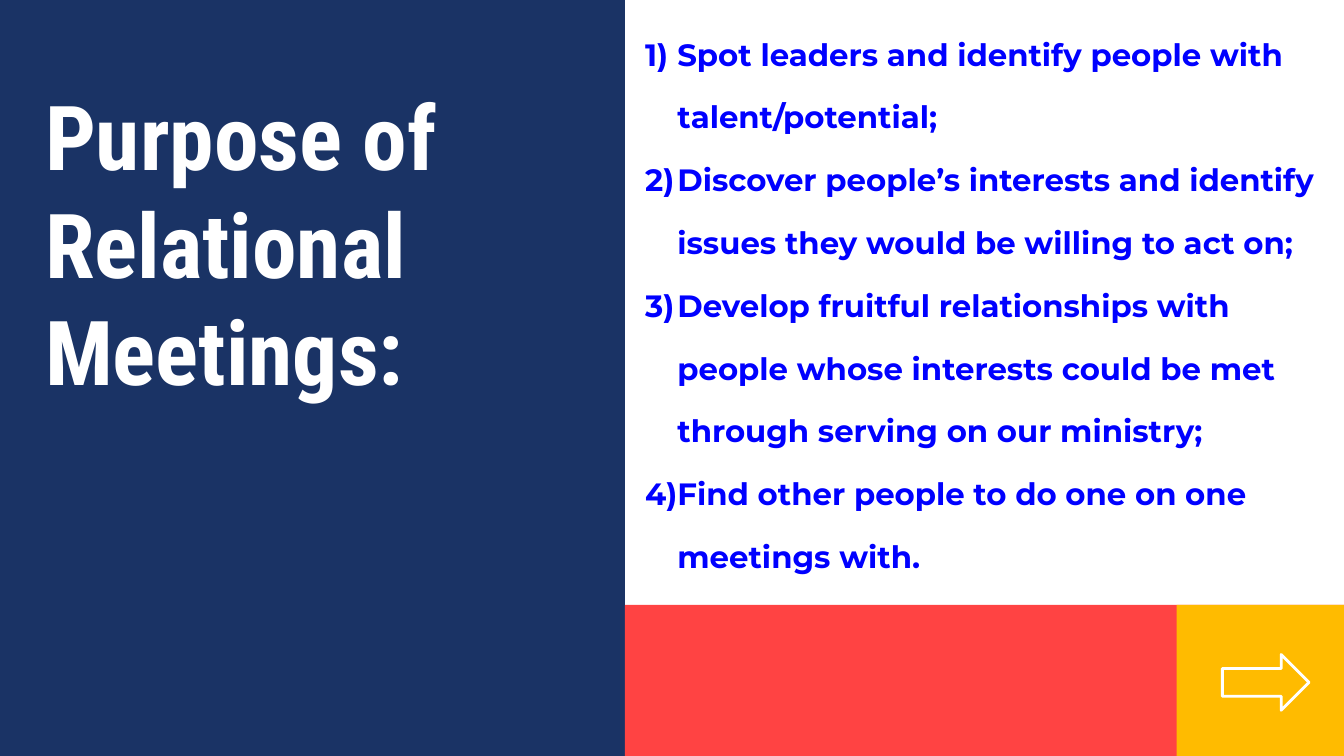
from dataclasses import dataclass

from lxml import etree
from pptx import Presentation
from pptx import util as u
from pptx.dml.color import RGBColor
from pptx.enum import shapes, text
from pptx.oxml import ns


@dataclass(frozen=True)
class Theme:
    navy: str = "1A3365"
    red: str = "FF4343"
    yellow: str = "FFBB00"
    white: str = "FFFFFF"
    blue: str = "0000FF"
    title_font: str = "Roboto Condensed"
    body_font: str = "Montserrat"
    title_size: float = 96
    body_size: float = 33


THEME = Theme()

# The grid has square cells: 20 columns by 11.25 rows.
COLUMNS, ROWS = 20, 11.25
CELL = u.Inches(1)
PANEL_RIGHT = 9.3
BAND_TOP = 9
BAND_HEIGHT = ROWS - BAND_TOP
CORNER_LEFT = 17.51

TITLE = "Purpose of Relational Meetings:"
PURPOSES = [
    "Spot leaders and identify people with talent/potential;",
    "Discover people’s interests and identify issues they would be willing to act on;",
    "Develop fruitful relationships with people whose interests could be met "
    "through serving on our ministry;",
    "Find other people to do one on one meetings with.",
]


def cells(*counts):
    return [round(count * CELL) for count in counts]


def add_block(slide, color, left, top, width, height):
    shape = slide.shapes.add_shape(
        shapes.MSO_SHAPE.RECTANGLE, *cells(left, top, width, height))
    shape.shadow.inherit = False
    shape.fill.solid()
    shape.fill.fore_color.rgb = RGBColor.from_string(color)
    shape.line.fill.background()


def add_outline_arrow(slide, left, top, width, height):
    shape = slide.shapes.add_shape(
        shapes.MSO_SHAPE.RIGHT_ARROW, *cells(left, top, width, height))
    shape.shadow.inherit = False
    shape.fill.background()
    shape.line.color.rgb = RGBColor.from_string(THEME.white)
    shape.line.width = u.Pt(3)


def place_placeholder(placeholder, left, top, width, height):
    """Position a placeholder in front of the blocks and clear its insets."""
    placeholder.left, placeholder.top, placeholder.width, placeholder.height = cells(
        left, top, width, height)
    placeholder.element.getparent().append(placeholder.element)
    frame = placeholder.text_frame
    frame.margin_left = frame.margin_top = frame.margin_right = frame.margin_bottom = 0
    frame.word_wrap = True
    frame.auto_size = text.MSO_AUTO_SIZE.NONE
    frame.vertical_anchor = text.MSO_ANCHOR.TOP
    return frame


def add_run(paragraph, words, font, size, color):
    paragraph.alignment = text.PP_ALIGN.LEFT
    paragraph.space_before = paragraph.space_after = u.Pt(0)
    run = paragraph.add_run()
    run.text = words
    run.font.name = font
    run.font.size = u.Pt(size)
    run.font.bold = True
    run.font.color.rgb = RGBColor.from_string(color)


def number_paragraph(paragraph, font, color):
    """Give a paragraph a hanging 1) number; spacing must be set before."""
    properties = paragraph._p.get_or_add_pPr()
    properties.set("marL", str(u.Inches(0.5)))
    properties.set("indent", str(u.Inches(-0.48)))
    bullet_color = etree.SubElement(properties, ns.qn("a:buClr"))
    etree.SubElement(bullet_color, ns.qn("a:srgbClr"), val=color)
    etree.SubElement(properties, ns.qn("a:buFont"), typeface=font)
    etree.SubElement(properties, ns.qn("a:buAutoNum"), type="arabicParenR")


def fill_title(slide):
    frame = place_placeholder(slide.shapes.title, 0.67, 1.21, 7.93, 4.85)
    add_run(frame.paragraphs[0], TITLE, THEME.title_font, THEME.title_size, THEME.white)


def fill_purposes(slide):
    frame = place_placeholder(slide.placeholders[1], 9.58, 0.14, 10.4, 11.89)
    for index, purpose in enumerate(PURPOSES):
        paragraph = frame.add_paragraph() if index else frame.paragraphs[0]
        paragraph.line_spacing = 1.7
        add_run(paragraph, purpose, THEME.body_font, THEME.body_size, THEME.blue)
        number_paragraph(paragraph, THEME.body_font, THEME.blue)


def main():
    presentation = Presentation()
    presentation.slide_width, presentation.slide_height = cells(COLUMNS, ROWS)
    slide = presentation.slides.add_slide(presentation.slide_layouts[1])
    slide.background.fill.solid()
    slide.background.fill.fore_color.rgb = RGBColor.from_string(THEME.white)

    add_block(slide, THEME.navy, 0, 0, PANEL_RIGHT, ROWS)
    add_block(slide, THEME.red, PANEL_RIGHT, BAND_TOP, COLUMNS - PANEL_RIGHT, BAND_HEIGHT)
    add_block(slide, THEME.yellow, CORNER_LEFT, BAND_TOP, COLUMNS - CORNER_LEFT, BAND_HEIGHT)
    add_outline_arrow(slide, 18.19, 9.74, 1.29, 0.83)
    fill_title(slide)
    fill_purposes(slide)
    presentation.save("out.pptx")


if __name__ == "__main__":
    main()
